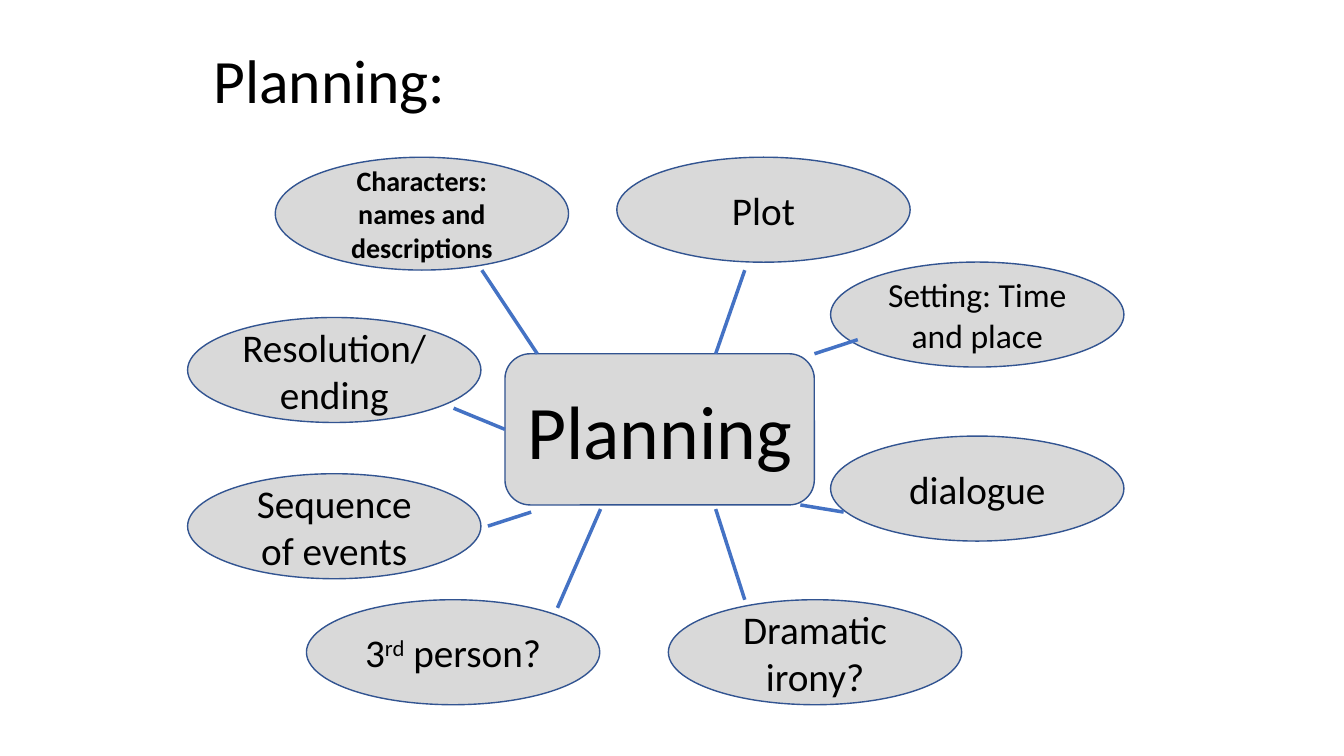
from lxml.etree import SubElement
from pptx import Presentation
from pptx.dml.color import RGBColor
from pptx.enum.shapes import MSO_CONNECTOR, MSO_SHAPE
from pptx.enum.text import MSO_ANCHOR, PP_ALIGN
from pptx.oxml.ns import qn
from pptx.util import Pt

FONT = "Calibri"
TEXT_COLOR = "000000"
BUBBLE_FILL = "D9D9D9"
BUBBLE_LINE = "325491"
SPOKE_COLOR = "4472C4"
IDEA_WIDTH, IDEA_HEIGHT = 209.5, 75
LEFT_COLUMN, RIGHT_COLUMN = 134, 593.3
TOP_ROW, BOTTOM_ROW = 112.3, 428.4

IDEAS = [
    (440.6, TOP_ROW, IDEA_HEIGHT, ["Plot"], 28, False),
    (196.6, TOP_ROW, 80.6, ["Characters: names and descriptions"], 20, True),
    (RIGHT_COLUMN, 187.2, IDEA_HEIGHT, ["Setting: Time and place"], 24, False),
    (477.4, BOTTOM_ROW, IDEA_HEIGHT, ["Dramatic irony?"], 28, False),
    (218.9, BOTTOM_ROW, IDEA_HEIGHT, ["3", "^rd", " person?"], 28, False),
    (LEFT_COLUMN, 338.4, IDEA_HEIGHT, ["Sequence of events"], 28, False),
    (LEFT_COLUMN, 226.8, IDEA_HEIGHT, ["Resolution/ ending"], 28, False),
    (RIGHT_COLUMN, 311.5, IDEA_HEIGHT, ["dialogue"], 28, False),
]

SPOKES = [
    (344.2, 193, 383.8, 252.7),
    (532, 193, 511.2, 252.7),
    (612.7, 242.6, 581.8, 252.7),
    (602.6, 365.8, 571.7, 360.7),
    (511.2, 363.6, 532, 428.4),
    (360.7, 306.7, 324, 291.6),
    (379.4, 365.8, 348.5, 375.8),
    (429, 363.6, 398.2, 434.2),
]


def color(value):
    """Turn a hex string into a colour."""
    return RGBColor.from_string(value)


def write_text(shape, parts, size, bold=False, alignment=PP_ALIGN.CENTER):
    """Fill a shape with runs; a part that starts with ^ is superscript."""
    frame = shape.text_frame
    frame.word_wrap = True
    frame.vertical_anchor = MSO_ANCHOR.MIDDLE
    paragraph = frame.paragraphs[0]
    paragraph.alignment = alignment
    for part in parts:
        run = paragraph.add_run()
        run.text = part.removeprefix("^")
        run.font.name = FONT
        run.font.size = Pt(size)
        run.font.bold = bold
        run.font.color.rgb = color(TEXT_COLOR)
        if part.startswith("^"):
            run._r.get_or_add_rPr().set("baseline", "30000")
    return paragraph


def add_title(slide, text):
    """Add the heading of the slide."""
    box = slide.shapes.add_textbox(Pt(145.4), Pt(15), Pt(600), Pt(90))
    paragraph = write_text(box, [text], 44, alignment=PP_ALIGN.LEFT)
    paragraph.line_spacing = 0.9


def add_bubble(slide, kind, left, top, width, height, parts, size, bold=False):
    """Add an outlined grey shape with centred text."""
    shape = slide.shapes.add_shape(kind, Pt(left), Pt(top), Pt(width), Pt(height))
    shape.shadow.inherit = False
    shape.fill.solid()
    shape.fill.fore_color.rgb = color(BUBBLE_FILL)
    shape.line.color.rgb = color(BUBBLE_LINE)
    shape.line.width = Pt(1)
    write_text(shape, parts, size, bold)


def add_spoke(slide, *ends):
    """Add a straight line between two points."""
    spoke = slide.shapes.add_connector(MSO_CONNECTOR.STRAIGHT, *map(Pt, ends))
    spoke.line.color.rgb = color(SPOKE_COLOR)
    spoke.line.width = Pt(2.5)
    SubElement(spoke._element.spPr, qn("a:effectLst"))


def main():
    """Build the planning mind map and save it."""
    presentation = Presentation()
    presentation.slide_width, presentation.slide_height = Pt(960), Pt(540)
    slide = presentation.slides.add_slide(presentation.slide_layouts[6])
    add_title(slide, "Planning:")
    add_bubble(slide, MSO_SHAPE.ROUNDED_RECTANGLE, 360.7, 252.7, 221, 108, ["Planning"], 54)
    for left, top, height, parts, size, bold in IDEAS:
        add_bubble(slide, MSO_SHAPE.OVAL, left, top, IDEA_WIDTH, height, parts, size, bold)
    for ends in SPOKES:
        add_spoke(slide, *ends)
    presentation.save("out.pptx")


if __name__ == "__main__":
    main()
